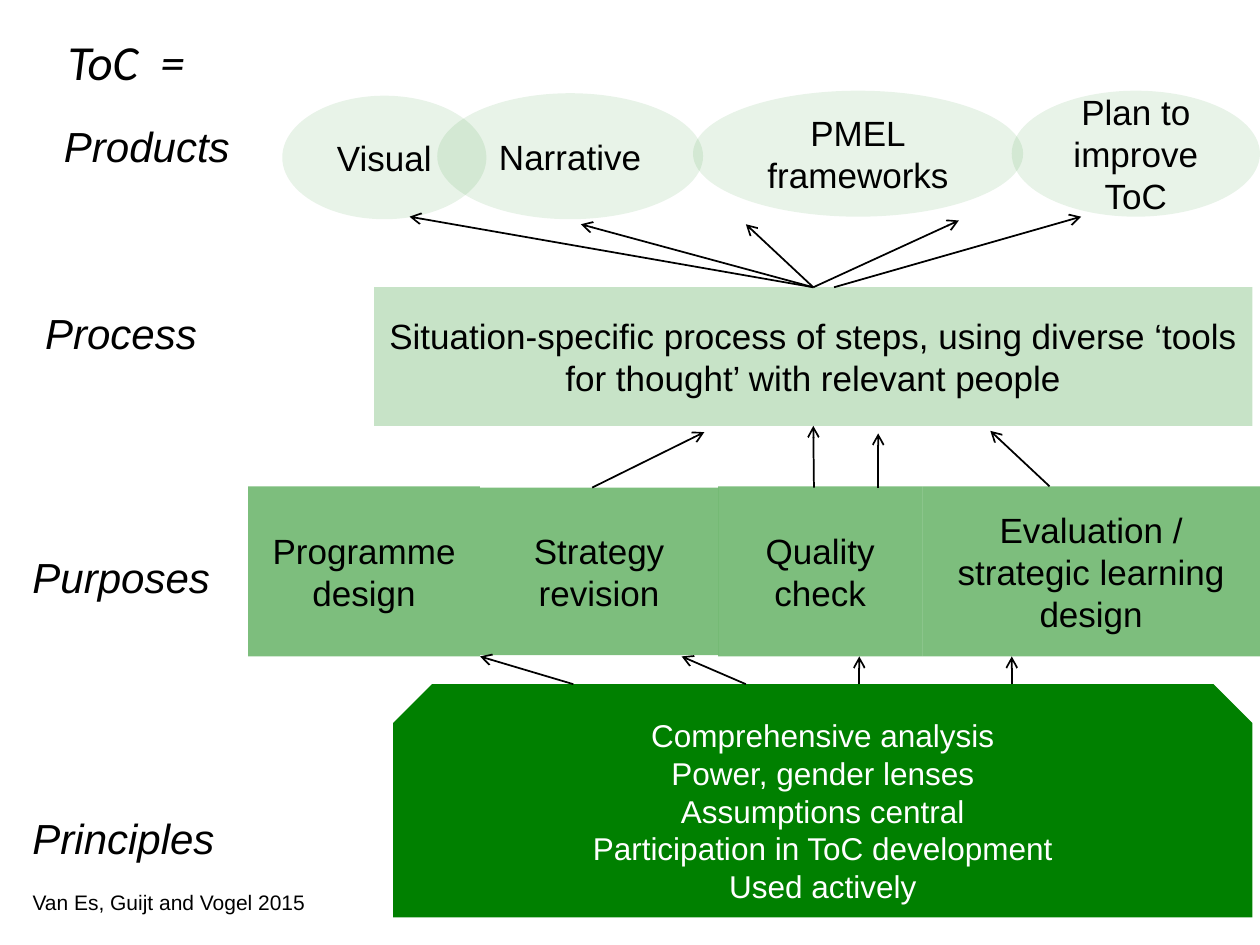
from typing import NamedTuple, Optional

from lxml.etree import SubElement
from pptx import Presentation
from pptx.dml.color import RGBColor
from pptx.enum.shapes import MSO_CONNECTOR, MSO_SHAPE
from pptx.enum.text import MSO_ANCHOR, MSO_AUTO_SIZE, PP_ALIGN
from pptx.oxml.ns import qn
from pptx.util import Inches, Pt

# The slide is a grid of 100 columns and 75 rows.
COLS, ROWS = 100, 75
WIDTH, HEIGHT = Inches(10), Inches(7.5)
GREEN, BLACK, WHITE = "008000", "000000", "FFFFFF"
TOP, BOTTOM = 0, 2


class Block(NamedTuple):
    text: str
    col: float
    row: float
    wide: float
    high: float


class Label(NamedTuple):
    text: str
    col: float
    row: float
    wide: float
    high: float
    size: int = 24
    font: str = "Arial"
    italic: bool = True
    wrap: bool = True


class Arrow(NamedTuple):
    start: tuple
    end: tuple
    leave: Optional[int] = None  # side of the process box it starts from
    reach: Optional[int] = None  # side of the process box it ends at


PURPOSES = [
    Block("Programme design", 19.7, 38.6, 18.4, 13.5),
    Block("Strategy revision", 38.1, 38.7, 18.9, 13.3),
    Block("Quality check", 57, 38.6, 16.2, 13.5),
    Block("Evaluation / strategic learning design", 73.2, 38.6, 26.8, 13.5),
]
PROCESS = Block("Situation-specific process of steps, using diverse ‘tools "
                "for thought’ with relevant people", 29.7, 22.8, 69.7, 11)
PRINCIPLES = Block("Comprehensive analysis\nPower, gender lenses\n"
                   "Assumptions central\nParticipation in ToC development\n"
                   "Used actively", 31.2, 54.3, 68.2, 18.5)
PRODUCTS = [
    Block("Narrative", 34.7, 7.4, 21.1, 10),
    Block("Visual", 22.4, 7.6, 16.2, 9.8),
    Block("PMEL\nframeworks", 55, 7.2, 26.2, 10),
    Block("Plan to improve ToC", 80.3, 7.2, 19.7, 10),
]
LABELS = [
    Label("Principles", 1.6, 64, 17.3, 9.1, wrap=False),
    Label("Purposes", 1.6, 43.3, 17, 9.1, wrap=False),
    Label("Process", 2.6, 23.9, 14.9, 9.1, wrap=False),
    Label("Products", 4.1, 9.1, 18.4, 5),
    Label("Van Es, Guijt and Vogel 2015", 1.6, 70.1, 23.8, 3, 12, italic=False),
    Label("ToC  =", 4.4, 2, 13.1, 5.7, 28, "Calibri"),
]
HUB = (64.5, 22.8)
ARROWS = [
    Arrow((45.5, 54.3), (38.1, 52.1)),
    Arrow((59.2, 54.3), (54.1, 52.1)),
    Arrow((68.2, 54.3), (68.2, 52.1)),
    Arrow((80.3, 54.3), (80.3, 52.1)),
    Arrow((47, 38.7), (55.9, 34.3)),
    Arrow((64.6, 38.7), (64.6, 33.8), reach=BOTTOM),
    Arrow((69.7, 38.7), (69.7, 34.4)),
    Arrow((83.3, 38.6), (78.6, 34.2)),
    Arrow(HUB, (32.5, 17.2), leave=TOP),
    Arrow(HUB, (46.1, 17.8), leave=TOP),
    Arrow(HUB, (59.2, 17.8), leave=TOP),
    Arrow(HUB, (76.1, 17.5), leave=TOP),
    Arrow((66.2, 22.8), (85.8, 17.2)),
]


def across(col: float) -> int:
    return round(WIDTH * col / COLS)


def down(row: float) -> int:
    return round(HEIGHT * row / ROWS)


def area(item) -> tuple:
    return across(item.col), down(item.row), across(item.wide), down(item.high)


def paint(color, code: str) -> None:
    color.rgb = RGBColor.from_string(code)


def style(frame, size: int, code: str, font: str = "Arial",
          italic: bool = False, align=PP_ALIGN.LEFT) -> None:
    for para in frame.paragraphs:
        para.alignment = align
        for run in para.runs:
            run.font.size = Pt(size)
            run.font.name = font
            run.font.italic = italic
            paint(run.font.color, code)


def draw_block(slide, block: Block, kind, alpha: int = 100,
               size: int = 20, code: str = BLACK):
    """Draw a green shape with centred text; alpha is its opacity in percent."""
    shape = slide.shapes.add_shape(kind, *area(block))
    shape.shadow.inherit = False
    shape.line.fill.background()
    shape.fill.solid()
    paint(shape.fill.fore_color, GREEN)
    if alpha < 100:
        tone = shape.fill._xPr.find(qn("a:solidFill"))[0]
        SubElement(tone, qn("a:alpha")).set("val", str(alpha * 1000))
    frame = shape.text_frame
    frame.text = block.text
    frame.word_wrap = True
    frame.vertical_anchor = MSO_ANCHOR.MIDDLE
    style(frame, size, code, align=PP_ALIGN.CENTER)
    return shape


def draw_label(slide, label: Label) -> None:
    frame = slide.shapes.add_textbox(*area(label)).text_frame
    frame.text = label.text
    frame.word_wrap = label.wrap
    frame.auto_size = MSO_AUTO_SIZE.SHAPE_TO_FIT_TEXT
    style(frame, label.size, BLACK, label.font, label.italic)


def draw_arrow(slide, arrow: Arrow, box) -> None:
    (left, top), (right, low) = arrow.start, arrow.end
    link = slide.shapes.add_connector(
        MSO_CONNECTOR.STRAIGHT, across(left), down(top), across(right), down(low))
    if arrow.leave is not None:
        link.begin_connect(box, arrow.leave)
    if arrow.reach is not None:
        link.end_connect(box, arrow.reach)
    link.line.width = Pt(1)
    paint(link.line.color, BLACK)
    SubElement(link.line._get_or_add_ln(), qn("a:tailEnd")).set("type", "arrow")
    SubElement(link._element.spPr, qn("a:effectLst"))


def main() -> None:
    deck = Presentation()
    deck.slide_width, deck.slide_height = WIDTH, HEIGHT
    slide = deck.slides.add_slide(deck.slide_layouts[6])
    for block in PURPOSES:
        draw_block(slide, block, MSO_SHAPE.RECTANGLE, 51)
    box = draw_block(slide, PROCESS, MSO_SHAPE.RECTANGLE, 22)
    draw_block(slide, PRINCIPLES, MSO_SHAPE.SNIP_2_SAME_RECTANGLE,
               size=18, code=WHITE)
    for block in PRODUCTS:
        draw_block(slide, block, MSO_SHAPE.OVAL, 9)
    for arrow in ARROWS:
        draw_arrow(slide, arrow, box)
    for label in LABELS:
        draw_label(slide, label)
    deck.save("out.pptx")


if __name__ == "__main__":
    main()
